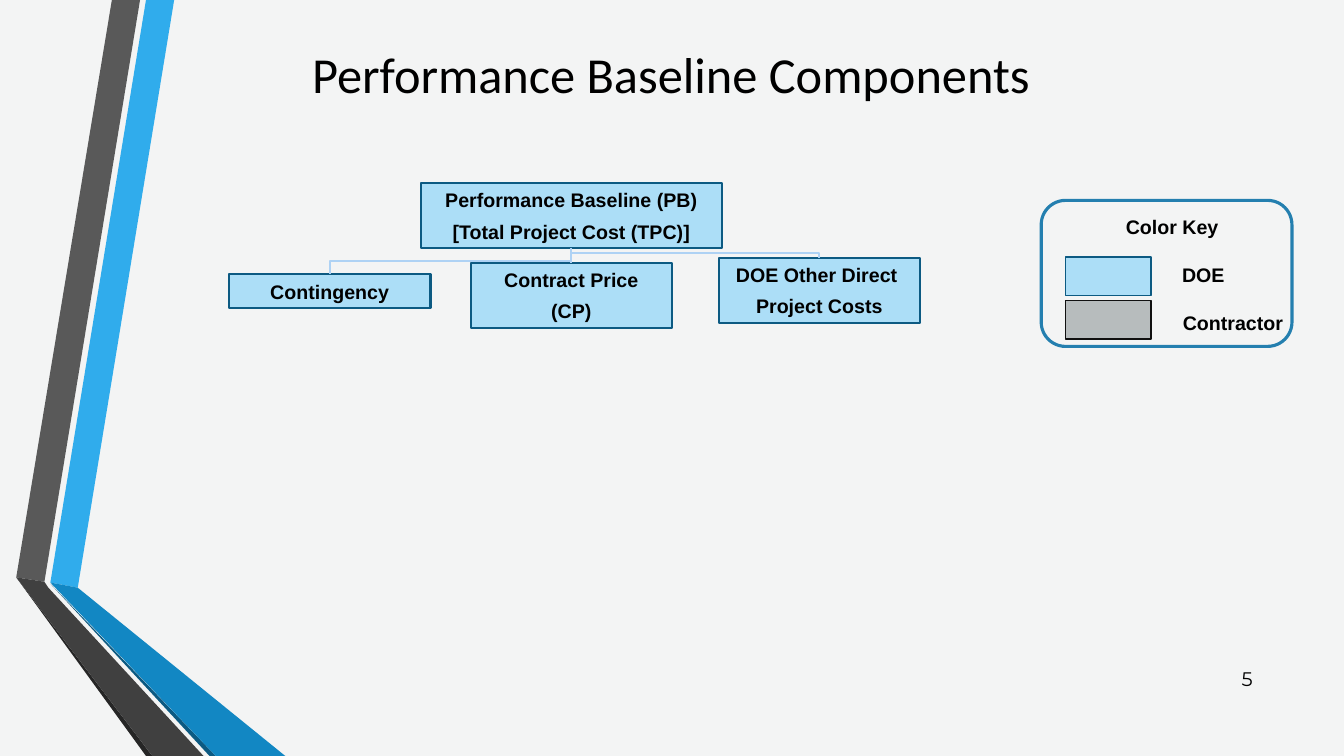
from dataclasses import dataclass

import lxml.etree
import pptx
import pptx.dml.color
import pptx.enum.shapes
import pptx.enum.text
import pptx.oxml.ns
import pptx.util

Cm = pptx.util.Cm
Pt = pptx.util.Pt
Align = pptx.enum.text.PP_ALIGN
Preset = pptx.enum.shapes.MSO_SHAPE


@dataclass(frozen=True)
class Theme:
    background: str = "F3F4F4"
    text: str = "000000"
    doe_fill: str = "ACDEF7"
    doe_line: str = "0C5A82"
    contractor_fill: str = "B7BCBD"
    contractor_line: str = "101010"
    key_line: str = "247FAF"
    branch_line: str = "AED2F4"
    body_font: str = "Arial"
    title_font: str = "Calibri"
    number_font: str = "Montserrat"
    title_size: int = 36
    body_size: int = 14


THEME = Theme()


@dataclass(frozen=True)
class Area:
    """A rectangle on the slide, in centimetres."""
    left: float
    top: float
    width: float
    height: float

    @property
    def center(self) -> float:
        return self.left + self.width / 2

    @property
    def bottom(self) -> float:
        return self.top + self.height

    def lengths(self) -> list:
        return [Cm(v) for v in (self.left, self.top, self.width, self.height)]


@dataclass(frozen=True)
class Component:
    text: str
    area: Area


@dataclass(frozen=True)
class Ribbon:
    color: str
    points: tuple


@dataclass(frozen=True)
class Swatch:
    fill: str
    line: str
    top: float


RIBBONS = [
    Ribbon("30ACEC", ((1.27, 14.68), (1.96, 14.81), (4.39, 0), (3.68, 0))),
    Ribbon("595959", ((3.53, 0), (2.82, 0), (0.41, 14.55), (1.12, 14.66))),
    Ribbon("262626", ((0.41, 14.55), (3.68, 19.05), (3.84, 19.05))),
    Ribbon("0C5A82", ((1.27, 14.71), (5.28, 19.05), (5.44, 19.05))),
    Ribbon("1287C3", ((1.27, 14.68), (5.44, 19.05), (7.19, 19.05), (1.96, 14.81))),
    Ribbon("404040", ((5.13, 19.05), (1.22, 14.81), (1.12, 14.66), (0.41, 14.55), (3.84, 19.05))),
]
BASELINE = Component("Performance Baseline (PB)\n[Total Project Cost (TPC)]", Area(10.6, 4.62, 7.6, 1.63))
PARTS = [
    Component("Contingency", Area(5.77, 6.91, 5.08, 0.86)),
    Component("Contract Price\n(CP)", Area(11.86, 6.63, 5.08, 1.63)),
    Component("DOE Other Direct \nProject Costs", Area(18.11, 6.5, 5.08, 1.63)),
]
SWATCHES = [
    Swatch(THEME.doe_fill, THEME.doe_line, 6.48),
    Swatch(THEME.contractor_fill, THEME.contractor_line, 7.57),
]


def rgb(color: str) -> pptx.dml.color.RGBColor:
    return pptx.dml.color.RGBColor.from_string(color)


def write(box, text: str, font: str, size: float, bold: bool = False,
          align=Align.CENTER, after: float = 0, middle: bool = True) -> None:
    frame = box.text_frame
    frame.word_wrap = True
    anchor = pptx.enum.text.MSO_ANCHOR
    frame.vertical_anchor = anchor.MIDDLE if middle else anchor.TOP
    frame.text = text
    for para in frame.paragraphs:
        para.alignment = align
        para.space_after = Pt(after)
        for span in para.runs:
            span.font.name = font
            span.font.size = Pt(size)
            span.font.bold = bold
            span.font.color.rgb = rgb(THEME.text)


def add_box(page, area: Area, line: str, weight: float, fill: str = "", preset=Preset.RECTANGLE):
    """Draw an outlined shape; without a fill colour it stays hollow."""
    box = page.shapes.add_shape(preset, *area.lengths())
    box.shadow.inherit = False
    box.line.color.rgb = rgb(line)
    box.line.width = Pt(weight)
    if fill:
        box.fill.solid()
        box.fill.fore_color.rgb = rgb(fill)
    else:
        box.fill.background()
    return box


def add_ribbon(page, ribbon: Ribbon) -> None:
    start, *others = [(Cm(x), Cm(y)) for x, y in ribbon.points]
    builder = page.shapes.build_freeform(*start)
    builder.add_line_segments(others, close=True)
    shape = builder.convert_to_shape()
    shape.shadow.inherit = False
    shape.fill.solid()
    shape.fill.fore_color.rgb = rgb(ribbon.color)
    shape.line.fill.background()


def add_component(page, component: Component) -> None:
    box = add_box(page, component.area, THEME.doe_line, 1.5, THEME.doe_fill)
    write(box, component.text, THEME.body_font, THEME.body_size, bold=True, after=5.6)


def add_branch(page, parent: Area, child: Area) -> None:
    """Join parent to child with an elbow turned so that it leaves downwards."""
    drop = child.top - parent.bottom
    run = child.center - parent.center
    rightward = run > 0.1
    middle_x = parent.center + run / 2
    middle_y = parent.bottom + drop / 2
    half_width = -drop / 2 if rightward else drop / 2
    half_height = abs(run) / 2
    branch = page.shapes.add_connector(
        pptx.enum.shapes.MSO_CONNECTOR.ELBOW,
        Cm(middle_x - half_width), Cm(middle_y - half_height),
        Cm(middle_x + half_width), Cm(middle_y + half_height))
    branch.line.color.rgb = rgb(THEME.branch_line)
    branch.line.width = Pt(1.5)
    properties = branch._element.spPr
    properties.xfrm.set("rot", str((270 if rightward else 90) * 60000))
    lxml.etree.SubElement(properties, pptx.oxml.ns.qn("a:effectLst"))


def add_color_key(page) -> None:
    add_box(page, Area(26.24, 5.05, 6.32, 3.68), THEME.key_line, 2.25, preset=Preset.ROUNDED_RECTANGLE)
    labels = page.shapes.add_textbox(*Area(26.49, 5.28, 6.1, 3.25).lengths())
    write(labels, "Color Key\nDOE\nContractor", THEME.body_font, THEME.body_size,
          bold=True, middle=False)
    heading, doe, contractor = labels.text_frame.paragraphs
    for para in (doe, contractor):
        para.space_before = Pt(17.8)
    doe.alignment = Align.LEFT
    doe._p.get_or_add_pPr().set("marL", str(Cm(3.05)))
    contractor.alignment = Align.RIGHT
    for swatch in SWATCHES:
        add_box(page, Area(26.85, swatch.top, 2.16, 0.97), swatch.line, 1.25, swatch.fill)


def main() -> None:
    deck = pptx.Presentation()
    deck.slide_width, deck.slide_height = Cm(33.87), Cm(19.05)
    page = deck.slides.add_slide(deck.slide_layouts[6])
    page.background.fill.solid()
    page.background.fill.fore_color.rgb = rgb(THEME.background)

    for ribbon in RIBBONS:
        add_ribbon(page, ribbon)
    title = page.shapes.add_textbox(*Area(2.31, 0, 29.21, 3.68).lengths())
    write(title, "Performance Baseline Components", THEME.title_font, THEME.title_size)

    for component in [BASELINE, *PARTS]:
        add_component(page, component)
    for part in PARTS:
        add_branch(page, BASELINE.area, part.area)
    add_color_key(page)

    number = page.shapes.add_textbox(*Area(30.3, 16.59, 1.52, 1.02).lengths())
    write(number, "5", THEME.number_font, THEME.body_size, align=Align.RIGHT)
    deck.save("out.pptx")


if __name__ == "__main__":
    main()
